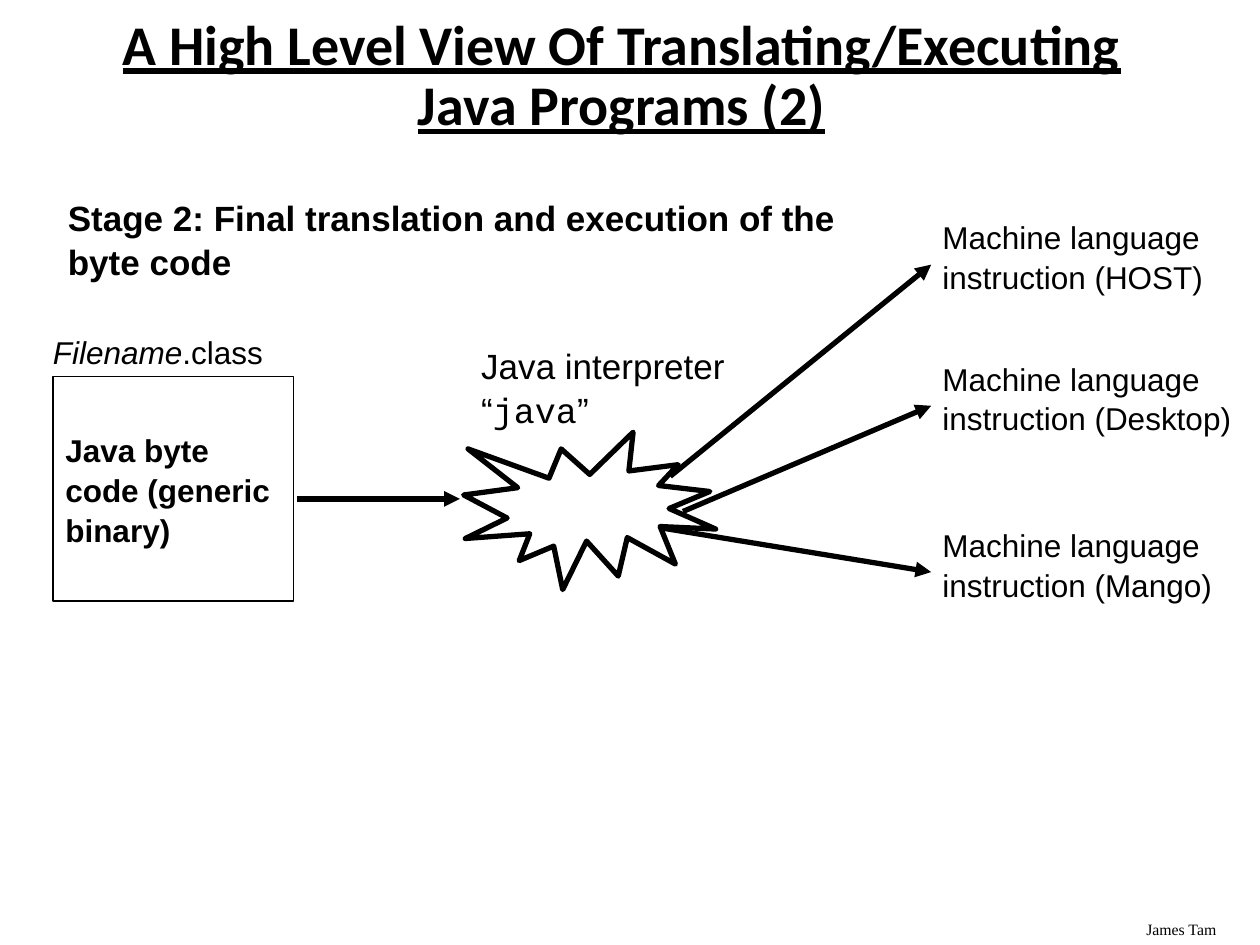
from pptx import Presentation
from pptx.enum.shapes import MSO_CONNECTOR, MSO_SHAPE
from pptx.enum.text import MSO_ANCHOR, MSO_AUTO_SIZE, PP_ALIGN
from pptx.dml.color import RGBColor
from pptx.oxml.ns import qn
from pptx.util import Pt
from lxml.etree import SubElement

COLORS = {"ink": "000000", "paper": "FFFFFF"}
TARGETS = [
    ("HOST", 120.25, (383, 272.2)),
    ("Desktop", 200.9, (390.25, 292.3)),
    ("Mango", 295.9, (378, 301.7)),
]


def color(name):
    return RGBColor.from_string(COLORS[name])


def add_run(p, text, size, font="Arial", bold=False, italic=False):
    r = p.add_run()
    r.text = text
    r.font.size, r.font.name = Pt(size), font
    r.font.bold, r.font.italic = bold, italic
    r.font.color.rgb = color("ink")
    return r


def set_frame(tf, left=7.2, anchor=MSO_ANCHOR.TOP):
    tf.word_wrap = True
    tf.auto_size = MSO_AUTO_SIZE.NONE
    tf.vertical_anchor = anchor
    tf.margin_left, tf.margin_right = Pt(left), Pt(7.2)
    tf.margin_top = tf.margin_bottom = Pt(3.6)


def add_text(s, box, left=7.2, spacing=1.05):
    tf = s.shapes.add_textbox(*map(Pt, box)).text_frame
    set_frame(tf, left)
    p = tf.paragraphs[0]
    p.line_spacing = spacing
    return p


def add_outline(s, kind, box, width):
    sp = s.shapes.add_shape(kind, *map(Pt, box))
    sp.shadow.inherit = False
    sp.fill.background()
    sp.line.color.rgb = color("ink")
    sp.line.width = Pt(width)
    return sp


def add_arrow(s, start, end):
    c = s.shapes.add_connector(MSO_CONNECTOR.STRAIGHT, *map(Pt, start + end))
    c.line.color.rgb = color("ink")
    c.line.width = Pt(3)
    SubElement(c.line._get_or_add_ln(), qn("a:tailEnd"), type="triangle")
    SubElement(c._element.spPr, qn("a:effectLst"))


def add_title(s, box):
    sp = s.shapes.title
    sp.left, sp.top, sp.width, sp.height = map(Pt, box)
    set_frame(sp.text_frame, anchor=MSO_ANCHOR.MIDDLE)
    p = sp.text_frame.paragraphs[0]
    p.alignment = PP_ALIGN.CENTER
    p.line_spacing = 0.9
    title = "A High Level View Of Translating/Executing Java Programs (2)"
    add_run(p, title, 32, "Calibri", bold=True).font.underline = True


def add_interpreter(s, box):
    x, y, w, h = box
    add_outline(s, MSO_SHAPE.EXPLOSION1, (x, y + 54.7, w - 15.1, h - 54.7), 3)
    p = add_text(s, (x + 2.9, y, w, 55.4))
    add_run(p, "Java interpreter “", 20)
    add_run(p, "java", 20, "Courier New")
    add_run(p, "”", 20)


def add_byte_code(s, box):
    x, y, w, h = box
    sp = add_outline(s, MSO_SHAPE.RECTANGLE, (x, y + 29.5, w, h - 29.5), 0.75)
    set_frame(sp.text_frame, anchor=MSO_ANCHOR.MIDDLE)
    p = sp.text_frame.paragraphs[0]
    p.alignment = PP_ALIGN.LEFT
    p.line_spacing = 1.05
    add_run(p, "Java byte code (generic binary)", 18, bold=True)
    p = add_text(s, (x, y, w + 17, 28.8), left=0)
    add_run(p, "Filename", 18, italic=True)
    add_run(p, ".class", 18)


def add_target(s, box, system, start):
    x, y, w, h = box
    add_arrow(s, start, (x + 0.7, y + 31))
    add_run(add_text(s, box), f"Machine language instruction ({system})", 18)


def main():
    prs = Presentation()
    prs.slide_width, prs.slide_height = Pt(720), Pt(540)
    s = prs.slides.add_slide(prs.slide_layouts[5])
    s.background.fill.solid()
    s.background.fill.fore_color.rgb = color("paper")

    add_run(add_text(s, (648, 522, 72, 18), spacing=1), "James Tam", 9, "Times New Roman")
    add_title(s, (33.8, 23.8, 643, 41))
    add_interpreter(s, (265, 192.25, 159.1, 144.7))
    add_arrow(s, (170, 285.1), (262.8, 285.1))
    add_byte_code(s, (30.25, 185.75, 137.5, 157.7))
    for system, top, start in TARGETS:
        add_target(s, (531.4, top, 188.6, 50.4), system, start)
    p = add_text(s, (31.7, 107.3, 493.9, 55.4))
    add_run(p, "Stage 2: Final translation and execution of the byte code", 20, bold=True)
    prs.save("out.pptx")


if __name__ == "__main__":
    main()
